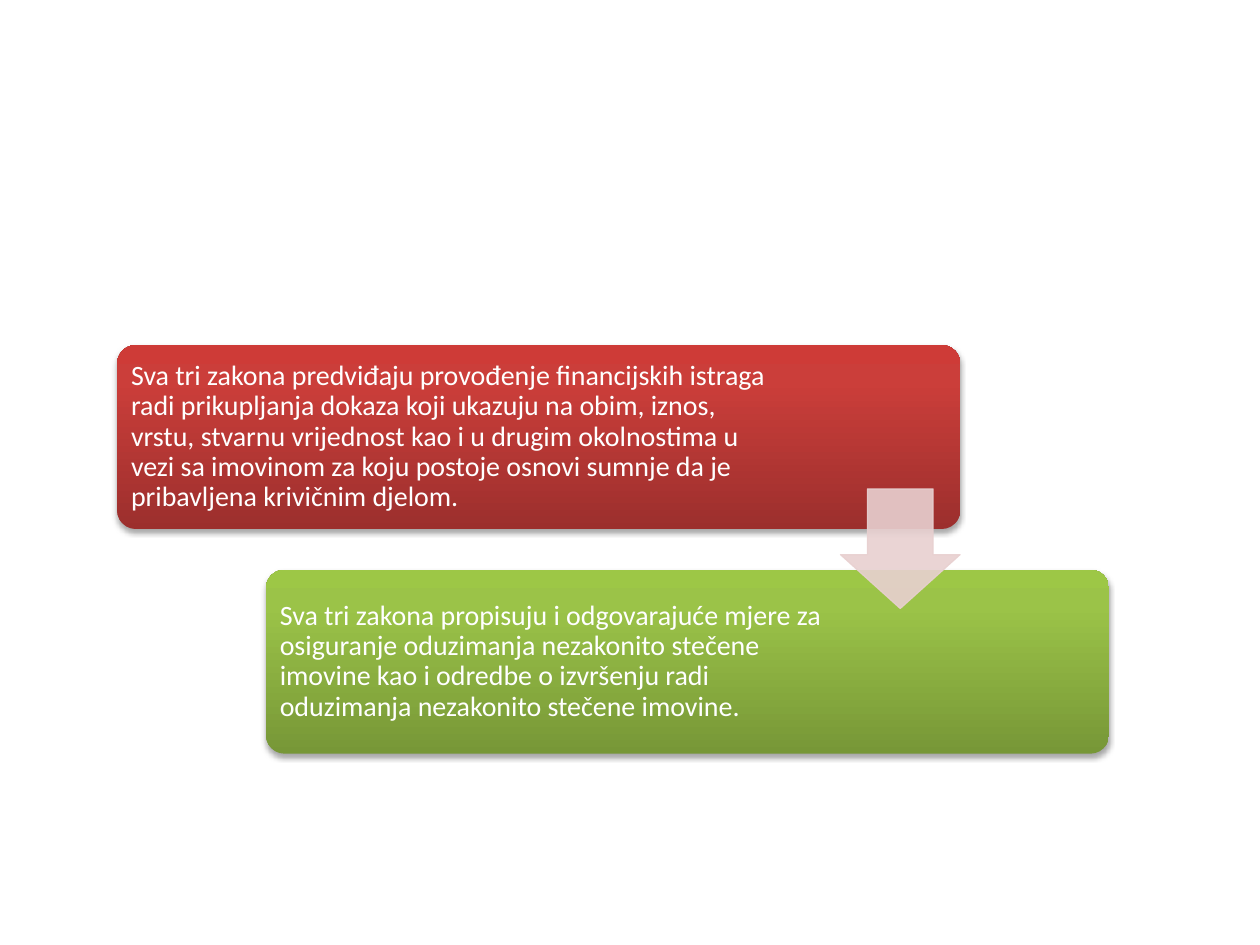
from copy import deepcopy
from dataclasses import dataclass

from lxml.etree import SubElement
from pptx import Presentation
from pptx.dml.color import RGBColor as RGB
from pptx.enum.shapes import MSO_SHAPE as SHAPE
from pptx.enum.text import MSO_ANCHOR as ANCHOR
from pptx.oxml import parse_xml
from pptx.oxml.ns import nsdecls, qn
from pptx.util import Pt


@dataclass(frozen=True)
class Theme:
    font: str = "Calibri"
    size: int = 16
    text: str = "FFFFFF"
    red: tuple = ((0, "9C2F2D"), (0.8, "CB3E3A"), (1, "CE3B37"))
    green: tuple = ((0, "779737"), (0.8, "9BC348"), (1, "9DC746"))
    arrow: str = "E8D0D0"
    arrow_alpha: int = 90


THEME = Theme()

CARD_W, CARD_H = 481.7, 105.1
CARD_LEFT, CARD_TOP = 67, 197.2
STEP_X, STEP_Y = 85, 128.4
TEXT_INSET = 3.1

# Text and its width, with the gradient of the card behind it
STEPS = [
    ("Sva tri zakona predviđaju provođenje financijskih istraga radi "
     "prikupljanja dokaza koji ukazuju na obim, iznos, vrstu, stvarnu "
     "vrijednost kao i u drugim okolnostima u vezi sa imovinom za koju "
     "postoje osnovi sumnje da je pribavljena krivičnim djelom.",
     373.7, THEME.red),
    ("Sva tri zakona propisuju i odgovarajuće mjere za osiguranje oduzimanja "
     "nezakonito stečene imovine kao i odredbe o izvršenju radi oduzimanja "
     "nezakonito stečene imovine.",
     322.6, THEME.green),
]


def set_gradient(sp, stops):
    """Fill from bottom to top with any number of stops."""
    sp.fill.gradient()
    sp.fill.gradient_angle = 90
    stop_list = sp._element.spPr.find(qn("a:gradFill")).find(qn("a:gsLst"))
    while len(stop_list) < len(stops):
        stop_list.append(deepcopy(stop_list[0]))
    for stop, (position, color) in zip(sp.fill.gradient_stops, stops):
        stop.position = position
        stop.color.rgb = RGB.from_string(color)


def add_shadow(sp):
    effects = sp._element.spPr.find(qn("a:effectLst"))
    effects.append(parse_xml(
        f'<a:outerShdw {nsdecls("a")} blurRad="{Pt(3.1)}" dist="{Pt(1.8)}" '
        'dir="5400000" rotWithShape="0"><a:srgbClr val="000000">'
        '<a:alpha val="35000"/></a:srgbClr></a:outerShdw>'))


def add_card(slide, x, y, stops):
    sp = slide.shapes.add_shape(
        SHAPE.ROUNDED_RECTANGLE, Pt(x), Pt(y), Pt(CARD_W), Pt(CARD_H))
    sp.adjustments[0] = 0.1
    sp.shadow.inherit = False
    sp.line.fill.background()
    set_gradient(sp, stops)
    add_shadow(sp)


def add_text(slide, x, y, w, h, text):
    tf = slide.shapes.add_textbox(Pt(x), Pt(y), Pt(w), Pt(h)).text_frame
    tf.word_wrap = True
    tf.vertical_anchor = ANCHOR.MIDDLE
    tf.margin_left = tf.margin_right = Pt(4.8)
    tf.margin_top = tf.margin_bottom = Pt(4.8)
    p = tf.paragraphs[0]
    p.text = text
    p.line_spacing = 0.9
    p.font.name = THEME.font
    p.font.size = Pt(THEME.size)
    p.font.color.rgb = RGB.from_string(THEME.text)


def add_down_arrow(slide, x, y, size):
    sp = slide.shapes.add_shape(
        SHAPE.DOWN_ARROW, Pt(x), Pt(y), Pt(size), Pt(size))
    sp.adjustments[0], sp.adjustments[1] = 0.55, 0.45
    sp.shadow.inherit = False
    sp.line.width = Pt(0.75)
    for fill in (sp.fill, sp.line.fill):
        fill.solid()
        fill.fore_color.rgb = RGB.from_string(THEME.arrow)
    for color in sp._element.spPr.iter(qn("a:srgbClr")):
        SubElement(color, qn("a:alpha"), val=str(THEME.arrow_alpha * 1000))


def main():
    prs = Presentation()
    prs.slide_width, prs.slide_height = Pt(720), Pt(540)
    slide = prs.slides.add_slide(prs.slide_layouts[6])
    for i, (text, text_w, stops) in enumerate(STEPS):
        x, y = CARD_LEFT + i * STEP_X, CARD_TOP + i * STEP_Y
        add_card(slide, x, y, stops)
        add_text(slide, x + TEXT_INSET, y + TEXT_INSET,
                 text_w, CARD_H - 2 * TEXT_INSET, text)
    add_down_arrow(slide, 480.3, 279.4, 68.3)
    prs.save("out.pptx")


if __name__ == "__main__":
    main()
